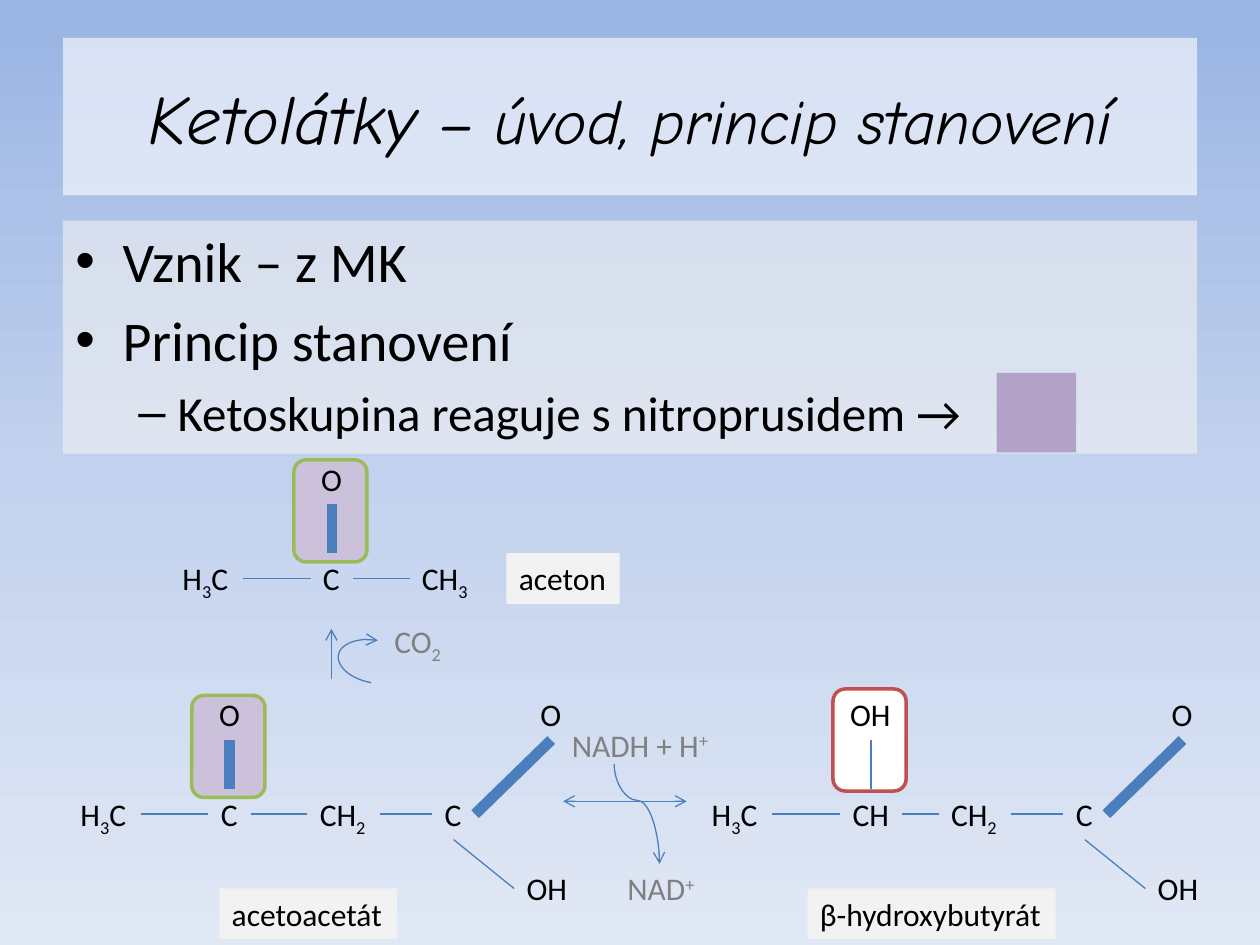
import copy

import pptx
import pptx.dml.color
import pptx.enum.dml
import pptx.enum.shapes
import pptx.enum.text
import pptx.oxml
import pptx.oxml.ns
import pptx.util
from lxml import etree

Pt = pptx.util.Pt
RGB = pptx.dml.color.RGBColor
qn = pptx.oxml.ns.qn
SHAPES = pptx.enum.shapes.MSO_SHAPE
CONNECTORS = pptx.enum.shapes.MSO_CONNECTOR

BLACK = RGB(0x00, 0x00, 0x00)
GREY = RGB(0x80, 0x80, 0x80)
WHITE = RGB(0xFF, 0xFF, 0xFF)
PALE = RGB(0xF2, 0xF2, 0xF2)
PURPLE = RGB(0xB3, 0xA2, 0xC7)
LILAC = RGB(0xCC, 0xC1, 0xDA)
GREEN = RGB(0x9B, 0xBB, 0x59)
RED = RGB(0xC0, 0x50, 0x4D)
BLUE = RGB(0x4B, 0x7E, 0xBC)
SKY = [(0, RGB(0x9A, 0xB5, 0xE4)), (0.5, RGB(0xC2, 0xD1, 0xED)), (1, RGB(0xE1, 0xE8, 0xF5))]

LABEL_HEIGHT = 29.1
TOP, LEFT, BOTTOM, RIGHT = range(4)
WIDTHS = {"H|3|C": 41.6, "CH|2": 41.6, "CH|3": 41.6, "C": 24.5, "CH": 35.3, "O": 26.6, "OH": 38.2}

deck = pptx.Presentation()
deck.slide_width, deck.slide_height = Pt(720), Pt(540)
page = deck.slides.add_slide(deck.slide_layouts[5])


def add_label(text, left, top, width, color=BLACK, fill=None):
    """Add a one-line label; every second piece between bars is raised or lowered."""
    box = page.shapes.add_textbox(Pt(left), Pt(top), Pt(width), Pt(LABEL_HEIGHT))
    box.text_frame.word_wrap = False
    box.text_frame.auto_size = pptx.enum.text.MSO_AUTO_SIZE.SHAPE_TO_FIT_TEXT
    if fill is not None:
        box.fill.solid()
        box.fill.fore_color.rgb = fill
    para = box.text_frame.paragraphs[0]
    para.font.name, para.font.size = "Calibri", Pt(18)
    para.font.color.rgb = color
    for index, piece in enumerate(text.split("|")):
        span = para.add_run()
        span.text = piece
        if index % 2:
            span.font._element.set("baseline", "30000" if piece == "+" else "-25000")
    return box


def style_line(shape, width=0.75, ends=()):
    """Give a blue line without shadow, with open arrowheads at the named ends."""
    shape.line.color.rgb = BLUE
    shape.line.width = Pt(width)
    for end in ends:
        etree.SubElement(shape.line._get_or_add_ln(), qn(f"a:{end}End"), type="arrow")
    properties = shape._element.spPr
    if properties.find(qn("a:effectLst")) is None:
        etree.SubElement(properties, qn("a:effectLst"))


# Background gradient
sky = page.background.fill
sky.gradient()
sky.gradient_angle = 270
stop_list = page._element.find(".//" + qn("a:gsLst"))
stop_list.append(copy.deepcopy(stop_list[-1]))
for stop, (position, color) in zip(sky.gradient_stops, SKY):
    stop.position = position
    stop.color.rgb = color

# Title
title = page.shapes.title
title.left, title.top, title.width, title.height = Pt(36), Pt(21.6), Pt(648), Pt(90)
title.text_frame.vertical_anchor = pptx.enum.text.MSO_ANCHOR.MIDDLE
para = title.text_frame.paragraphs[0]
para.alignment = pptx.enum.text.PP_ALIGN.CENTER
para.font.name, para.font.italic = "Comic Neue", True
para.font.color.rgb = BLACK
for text, size in [("Ketolátky ", 39.6), ("– úvod, princip stanovení", 36)]:
    span = para.add_run()
    span.text = text
    span.font.size = Pt(size)

# Bulleted text
body = page.shapes.add_textbox(Pt(36), Pt(126), Pt(648), Pt(133.2))
body.text_frame.word_wrap = True
bullets = [
    ("Vznik – z MK", "•", 32, 27, 27, 0),
    ("Princip stanovení", "•", 32, 27, 27, 6.4),
    ("Ketoskupina reaguje s nitroprusidem →", "–", 28, 58.5, 22.5, 5.6),
]
for index, (text, mark, size, margin, hanging, before) in enumerate(bullets):
    para = body.text_frame.add_paragraph() if index else body.text_frame.paragraphs[0]
    para.text = text
    properties = para._p.get_or_add_pPr()
    properties.set("marL", str(Pt(margin)))
    properties.set("indent", str(-Pt(hanging)))
    etree.SubElement(properties, qn("a:buFont"), typeface="Arial")
    etree.SubElement(properties, qn("a:buChar"), char=mark)
    para.space_before = Pt(before)
    para.font.name, para.font.size = "Calibri", Pt(size)
    para.font.color.rgb = BLACK

# Translucent panels behind title and text
for panel, color in [(title, WHITE), (body, PALE)]:
    panel.fill.solid()
    panel.fill.fore_color.rgb = color
    tint = panel._element.spPr.find(".//" + qn("a:srgbClr"))
    etree.SubElement(tint, qn("a:alpha"), val="60000")

# Colour of the reaction
swatch = page.shapes.add_shape(SHAPES.RECTANGLE, Pt(569.5), Pt(213.1), Pt(45.4), Pt(45.4))
swatch.shadow.inherit = False
swatch.fill.solid()
swatch.fill.fore_color.rgb = PURPLE
swatch.line.fill.background()

# Molecules: left, chain top, middle atom, its offset, upper atom, bond width,
# third atom, third offset, carboxyl group, highlight fill, outline, rise
molecules = [
    (97.2, 316.1, "C", 92.5, "O", 6.25, "CH|3", 136.8, False, LILAC, GREEN, 53.3),
    (38.9, 450.7, "C", 92.5, "O", 6.25, "CH|2", 136.8, True, LILAC, GREEN, 53.3),
    (399.6, 450.7, "CH", 98.2, "OH", 1.5, "CH|2", 136.8, True, WHITE, RED, 57),
]
for (left, top, middle, center, upper, upper_width, third, third_offset,
     has_carboxyl, fill, outline, rise) in molecules:
    frame = page.shapes.add_shape(SHAPES.ROUNDED_RECTANGLE, Pt(left + center - 21.8),
                                  Pt(top - rise), Pt(41.8), Pt(58.3))
    frame.shadow.inherit = False
    frame.fill.solid()
    frame.fill.fore_color.rgb = fill
    frame.line.color.rgb = outline
    frame.line.width = Pt(2)

    atoms = [
        ("H|3|C", 0, 0),
        (middle, center - WIDTHS[middle] / 2, 0),
        (upper, center - WIDTHS[upper] / 2, -56.9),
        (third, third_offset, 0),
    ]
    bonds = [(0, RIGHT, 1, LEFT, 0.75), (2, BOTTOM, 1, TOP, upper_width), (1, RIGHT, 3, LEFT, 0.75)]
    if has_carboxyl:
        atoms += [("C", 208.1, 0), ("O", 262.8, -56.9), ("OH", 254.9, 42.5)]
        bonds += [(3, RIGHT, 4, LEFT, 0.75), (5, BOTTOM, 4, RIGHT, 6.25), (4, BOTTOM, 6, LEFT, 0.75)]
    boxes = [add_label(name, left + x, top + y, WIDTHS[name]) for name, x, y in atoms]
    for start, start_side, end, end_side, width in bonds:
        bond = page.shapes.add_connector(CONNECTORS.STRAIGHT, 0, 0, 0, 0)
        bond.begin_connect(boxes[start], start_side)
        bond.end_connect(boxes[end], end_side)
        style_line(bond, width)

# Reaction arrows
for x1, y1, x2, y2, ends in [(189.4, 388.1, 189.4, 359.3, ["tail"]),
                             (321.8, 457.9, 392.4, 457.9, ["head", "tail"])]:
    arrow = page.shapes.add_connector(CONNECTORS.STRAIGHT, Pt(x1), Pt(y1), Pt(x2), Pt(y2))
    style_line(arrow, ends=ends)

# Carbon dioxide leaving
arc = page.shapes.add_shape(SHAPES.ARC, Pt(193), Pt(365.8), Pt(42.5), Pt(24.5))
arc.adjustments[0], arc.adjustments[1] = 162, 52.34
arc.rotation = 190.3
arc.shadow.inherit = False
arc.fill.background()
style_line(arc, ends=["tail"])

# Cofactor curve, turned to start and end vertically
curve = page.shapes.add_connector(CONNECTORS.CURVE, Pt(392.4), Pt(452.2), Pt(335.5), Pt(478.1))
curve._element.spPr.find(qn("a:xfrm")).set("rot", str(270 * 60000))
guides = curve._element.spPr.find(qn("a:prstGeom")).get_or_add_avLst()
etree.SubElement(guides, qn("a:gd"), name="adj1", fmla="val 36200")
style_line(curve, ends=["tail"])

# Cofactors and compound names
for text, left, top, width in [("CO|2", 218.2, 352.1, 42.5), ("NADH + H|+", 319.7, 411.1, 94.3),
                               ("NAD|+", 351.4, 493.2, 54)]:
    add_label(text, left, top, width, GREY)
for text, left, top, width in [("aceton", 289.4, 316.1, 64.8), ("acetoacetát", 125.3, 507.6, 101.5),
                               ("β-hydroxybutyrát", 461.5, 507.6, 141.8)]:
    add_label(text, left, top, width, fill=PALE)

deck.save("out.pptx")
